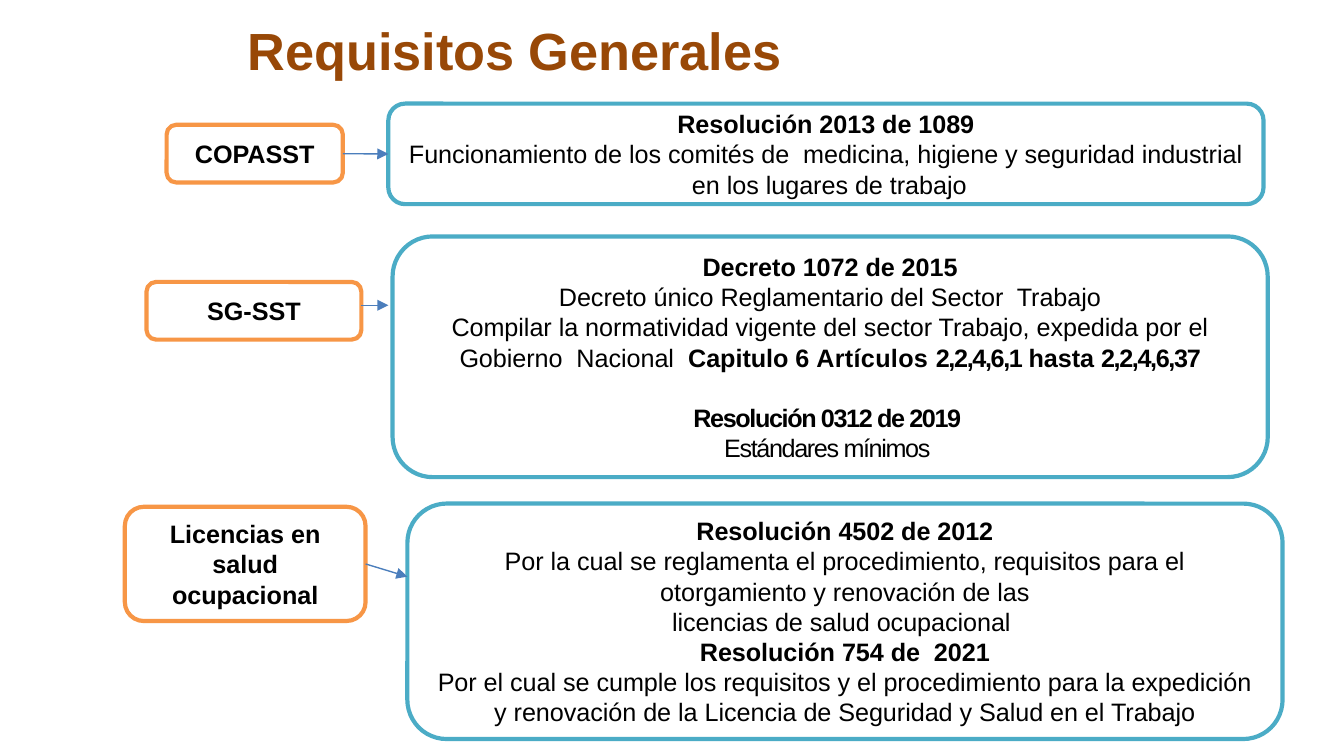
from dataclasses import dataclass
from typing import NamedTuple, Optional

from lxml.etree import SubElement
from pptx import Presentation
from pptx.dml.color import RGBColor as Rgb
from pptx.enum.shapes import MSO_CONNECTOR as Link, MSO_SHAPE as Preset
from pptx.enum.text import MSO_ANCHOR as Anchor, PP_ALIGN as Align
from pptx.oxml.ns import qn
from pptx.util import Cm, Pt


@dataclass(frozen=True)
class Theme:
    font: str = "Arial"
    title_size: float = 28
    body_size: float = 13.5
    box_line: float = 2.25
    arrow_line: float = 0.75
    title: Rgb = Rgb(0x98, 0x48, 0x07)
    text: Rgb = Rgb(0, 0, 0)
    paper: Rgb = Rgb(0xFF, 0xFF, 0xFF)
    topic: Rgb = Rgb(0xF7, 0x96, 0x46)
    rule: Rgb = Rgb(0x4B, 0xAC, 0xC6)
    arrow: Rgb = Rgb(0x4B, 0x7E, 0xBC)


class Span(NamedTuple):
    text: str
    bold: bool = False
    spacing: float = 0


class Line(NamedTuple):
    spans: list[Span]
    space_before: float = 0


class Area(NamedTuple):
    left: float
    top: float
    width: float
    height: float


class Arrow(NamedTuple):
    start: tuple[float, float]
    end: tuple[float, float]
    from_middle: bool = False
    to_middle: bool = False


@dataclass
class Requirement:
    topic: str
    topic_area: Area
    rule_area: Area
    arrow: Arrow
    lines: list[Line]


THEME = Theme()
RULE_WIDTH = 16.54
TOP, LEFT, BOTTOM, RIGHT = range(4)


def plain(text: str, spacing: float = 0) -> Line:
    return Line([Span(text, False, spacing)])


def heading(text: str, spacing: float = 0, space_before: float = 0) -> Line:
    return Line([Span(text, True, spacing)], space_before)


REQUIREMENTS = [
    Requirement(
        "COPASST", Area(3.15, 2.36, 3.33, 1.09), Area(7.34, 1.96, RULE_WIDTH, 1.9),
        Arrow((6.48, 2.91), (7.34, 2.91), from_middle=True, to_middle=True),
        [heading("Resolución 2013 de 1089"),
         plain("Funcionamiento de los comités de  medicina, higiene y seguridad "
               "industrial  en los lugares de trabajo")],
    ),
    Requirement(
        "SG-SST", Area(2.77, 5.33, 4.06, 1.09), Area(7.42, 4.47, RULE_WIDTH, 4.55),
        Arrow((6.83, 5.77), (7.34, 5.77)),
        [heading("Decreto 1072 de 2015"),
         plain("Decreto único Reglamentario del Sector  Trabajo"),
         Line([Span("Compilar la normatividad vigente del sector Trabajo, "
                    "expedida por el Gobierno  Nacional "),
               Span(" Capitulo 6 ", True), Span("Artículos ", True, 0.2),
               Span("2,2,4,6,1 ", True, -0.7), Span("hasta ", True),
               Span("2,2,4,6,37", True, -0.7)]),
         heading("Resolución 0312 de 2019 ", -0.7, space_before=16),
         plain("Estándares mínimos ", -0.7)],
    ),
    Requirement(
        "Licencias en salud ocupacional",
        Area(2.36, 9.58, 4.55, 2.16), Area(7.7, 9.52, RULE_WIDTH, 4.45),
        Arrow((6.91, 10.66), (7.7, 10.9), from_middle=True),
        [heading("Resolución 4502 de 2012"),
         plain("Por la cual se reglamenta el procedimiento, requisitos para el "
               "otorgamiento y renovación de las"),
         plain("licencias de salud ocupacional "),
         heading("Resolución 754 de  2021"),
         plain("Por el cual se cumple los requisitos y el procedimiento para la "
               "expedición y renovación de la Licencia de Seguridad y Salud en "
               "el Trabajo")],
    ),
]


def in_cm(area: Area) -> list[Cm]:
    return [Cm(length) for length in area]


def write_lines(frame, lines: list[Line], size: float, color: Rgb) -> None:
    frame.word_wrap = True
    for index, line in enumerate(lines):
        paragraph = frame.add_paragraph() if index else frame.paragraphs[0]
        paragraph.alignment = Align.CENTER
        if line.space_before:
            paragraph.space_before = Pt(line.space_before)
        for span in line.spans:
            run = paragraph.add_run()
            run.text = span.text
            font_format = {"name": THEME.font, "size": Pt(size), "bold": span.bold}
            for attribute, value in font_format.items():
                setattr(run.font, attribute, value)
            run.font.color.rgb = color
            if span.spacing:
                run.font._element.set("spc", str(round(span.spacing * 100)))


def draw_box(slide, area: Area, outline: Rgb, lines: list[Line]):
    box = slide.shapes.add_shape(Preset.ROUNDED_RECTANGLE, *in_cm(area))
    box.shadow.inherit = False
    box.fill.solid()
    box.fill.fore_color.rgb = THEME.paper
    box.line.color.rgb = outline
    box.line.width = Pt(THEME.box_line)
    box.text_frame.vertical_anchor = Anchor.MIDDLE
    write_lines(box.text_frame, lines, THEME.body_size, THEME.text)
    return box


def draw_arrow(slide, arrow: Arrow, topic_box, rule_box) -> None:
    ends = [Cm(length) for length in (*arrow.start, *arrow.end)]
    link = slide.shapes.add_connector(Link.STRAIGHT, *ends)
    if arrow.from_middle:
        link.begin_connect(topic_box, RIGHT)
    if arrow.to_middle:
        link.end_connect(rule_box, LEFT)
    link.line.color.rgb = THEME.arrow
    link.line.width = Pt(THEME.arrow_line)
    SubElement(link.line._get_or_add_ln(), qn("a:tailEnd"), type="triangle")
    SubElement(link._element.spPr, qn("a:effectLst"))


def main() -> None:
    deck = Presentation()
    deck.slide_width, deck.slide_height = Cm(25.4), Cm(14.29)
    slide = deck.slides.add_slide(deck.slide_layouts[6])

    # Title
    title = slide.shapes.add_textbox(*in_cm(Area(3.86, 0.23, 11.73, 1.45)))
    write_lines(title.text_frame, [heading("Requisitos Generales")],
                THEME.title_size, THEME.title)

    # Topics, each with an arrow to the rules that govern it
    for item in REQUIREMENTS:
        topic_box = draw_box(slide, item.topic_area, THEME.topic, [heading(item.topic)])
        rule_box = draw_box(slide, item.rule_area, THEME.rule, item.lines)
        draw_arrow(slide, item.arrow, topic_box, rule_box)

    deck.save("out.pptx")


if __name__ == "__main__":
    main()
